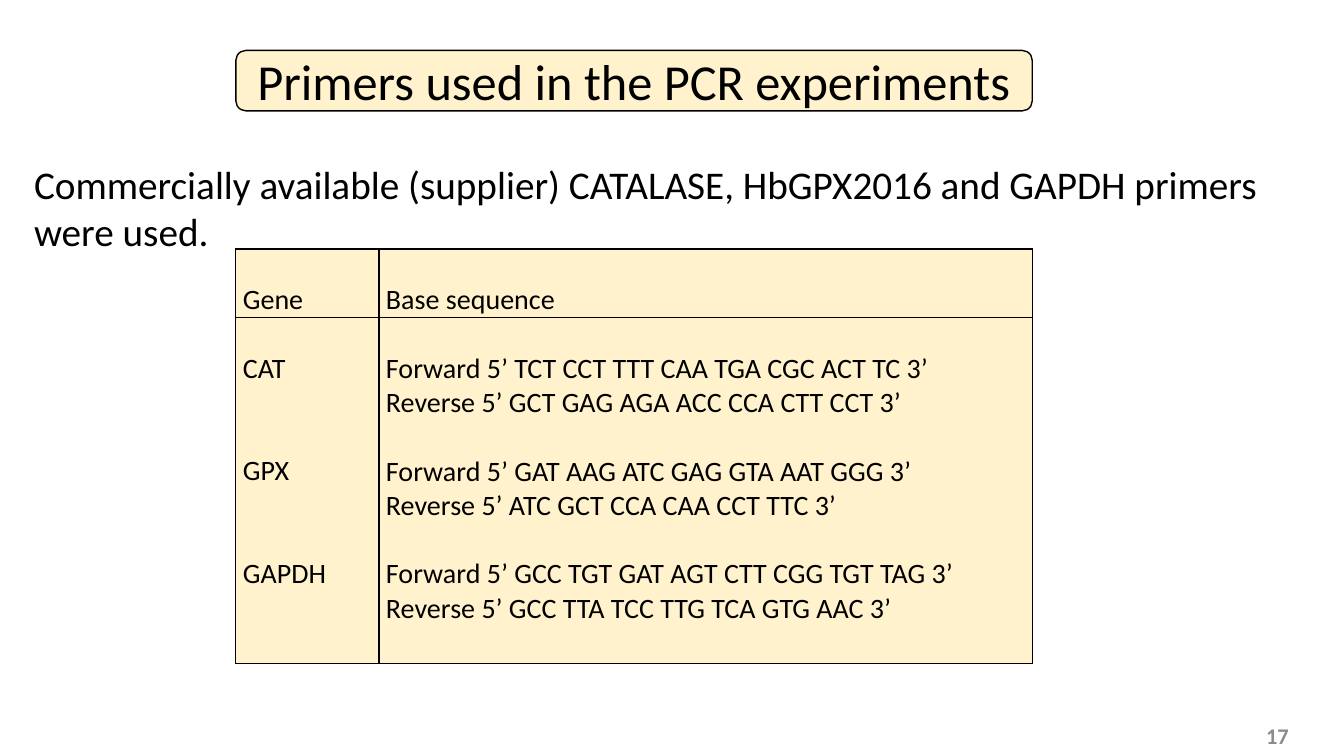
from dataclasses import dataclass

import pptx
import pptx.dml.color
import pptx.enum.shapes
import pptx.enum.text
import pptx.oxml
import pptx.oxml.ns
import pptx.util

Pt = pptx.util.Pt
Align = pptx.enum.text.PP_ALIGN
Anchor = pptx.enum.text.MSO_ANCHOR


@dataclass(frozen=True)
class Theme:
    font: str = "Calibri"
    ink: str = "000000"
    muted: str = "8C8C8C"
    cream: str = "FFF2CC"
    title: int = 36
    body: int = 28
    cell: int = 20
    number: int = 16
    line: float = 1
    cell_line: float = 24.4  # height of one line of cell text


@dataclass(frozen=True)
class Box:
    """Place in percent of the slide's width and height."""
    x: float
    y: float
    w: float
    h: float

    def emu(self) -> tuple:
        return across(self.x), down(self.y), across(self.w), down(self.h)


@dataclass(frozen=True)
class Primer:
    gene: str
    forward: str
    reverse: str


@dataclass(frozen=True)
class Label:
    text: str
    box: Box
    size: int
    color: str
    align: int = Align.LEFT
    anchor: int = Anchor.TOP
    bold: bool = False


T = Theme()
WIDTH, HEIGHT = pptx.util.Inches(13.33), pptx.util.Inches(7.5)
PANEL_X = 17.55
COLUMNS = (10.65, 48.61)
ROWS = (9.07, 45.73)

TITLE = Label("Primers used in the PCR experiments",
              Box(PANEL_X, 6.67, sum(COLUMNS), 8), T.title, T.ink, Align.CENTER, Anchor.MIDDLE)
LABELS = (
    Label("17", Box(74.12, 94.67, 22.51, 5.33), T.number, T.muted,
          Align.RIGHT, Anchor.MIDDLE, True),
    Label("Commercially available (supplier) CATALASE, HbGPX2016 and GAPDH primers were used.",
          Box(1.8, 20.53, 97.6, 20.13), T.body, T.ink),
)
HEADINGS = ("Gene", "Base sequence")
PRIMERS = (
    Primer("CAT", "TCT CCT TTT CAA TGA CGC ACT TC", "GCT GAG AGA ACC CCA CTT CCT"),
    Primer("GPX", "GAT AAG ATC GAG GTA AAT GGG", "ATC GCT CCA CAA CCT TTC"),
    Primer("GAPDH", "GCC TGT GAT AGT CTT CGG TGT TAG", "GCC TTA TCC TTG TCA GTG AAC"),
)


def across(percent: float) -> int:
    return round(WIDTH * percent / 100)


def down(percent: float) -> int:
    return round(HEIGHT * percent / 100)


def rgb(color: str) -> pptx.dml.color.RGBColor:
    return pptx.dml.color.RGBColor.from_string(color)


def style(p, size: int, color: str, align: int, bold: bool = False) -> None:
    p.alignment = align
    for r in p.runs:
        r.font.name, r.font.size, r.font.bold = T.font, Pt(size), bold
        r.font.color.rgb = rgb(color)


def write(sp, label: Label) -> None:
    tf = sp.text_frame
    tf.text = label.text
    tf.word_wrap = True
    tf.vertical_anchor = label.anchor
    style(tf.paragraphs[0], label.size, label.color, label.align, label.bold)


def add_title(s, label: Label) -> None:
    shape = pptx.enum.shapes.MSO_SHAPE.FLOWCHART_ALTERNATE_PROCESS
    sp = s.shapes.add_shape(shape, *label.box.emu())
    sp.shadow.inherit = False
    sp.fill.solid()
    sp.fill.fore_color.rgb = rgb(T.cream)
    sp.line.color.rgb = rgb(T.ink)
    sp.line.width = Pt(T.line)
    write(sp, label)


def add_borders(cell) -> None:
    tc_pr = cell._tc.get_or_add_tcPr()
    for i, side in enumerate(("lnL", "lnR", "lnT", "lnB")):
        tc_pr.insert(i, pptx.oxml.parse_xml(
            f'<a:{side} {pptx.oxml.ns.nsdecls("a")} w="{Pt(T.line)}"><a:solidFill>'
            f'<a:srgbClr val="{T.ink}"/></a:solidFill></a:{side}>'))


def fill_cell(cell, lines: list, gaps: list, top: float = 0, spacing: float = 1) -> None:
    """Write the lines; gaps holds the free lines above each of them."""
    cell.margin_left = cell.margin_right = pptx.util.Inches(0.07)
    cell.margin_top, cell.margin_bottom = Pt(top), 0
    cell.fill.solid()
    cell.fill.fore_color.rgb = rgb(T.cream)
    add_borders(cell)
    cell.text_frame.text = "\n".join(lines)
    for p, gap in zip(cell.text_frame.paragraphs, gaps):
        p.line_spacing = spacing
        p.space_before = Pt(gap * T.cell_line)
        style(p, T.cell, T.ink, Align.JUSTIFY)


def add_primer_table(s) -> None:
    box = Box(PANEL_X, 32.93, sum(COLUMNS), sum(ROWS))
    table = s.shapes.add_table(len(ROWS), len(COLUMNS), *box.emu()).table
    table.first_row = table.horz_banding = False
    for column, width in zip(table.columns, COLUMNS):
        column.width = across(width)
    for row, height in zip(table.rows, ROWS):
        row.height = down(height)

    # Headings
    for i, heading in enumerate(HEADINGS):
        fill_cell(table.cell(0, i), [heading], [0], spacing=2.0)

    # Genes beside their pairs of sequences
    genes = [primer.gene for primer in PRIMERS]
    pairs = [f"{name} 5’ {bases} 3’" for primer in PRIMERS
             for name, bases in (("Forward", primer.forward), ("Reverse", primer.reverse))]
    fill_cell(table.cell(1, 0), genes, [0, 2, 2], T.cell_line)
    fill_cell(table.cell(1, 1), pairs, [0, 0, 1, 0, 1, 0], T.cell_line)


def main() -> None:
    prs = pptx.Presentation()
    prs.slide_width, prs.slide_height = WIDTH, HEIGHT
    s = prs.slides.add_slide(prs.slide_layouts[6])
    add_title(s, TITLE)
    for label in LABELS:
        write(s.shapes.add_textbox(*label.box.emu()), label)
    add_primer_table(s)
    prs.save("out.pptx")


if __name__ == "__main__":
    main()
